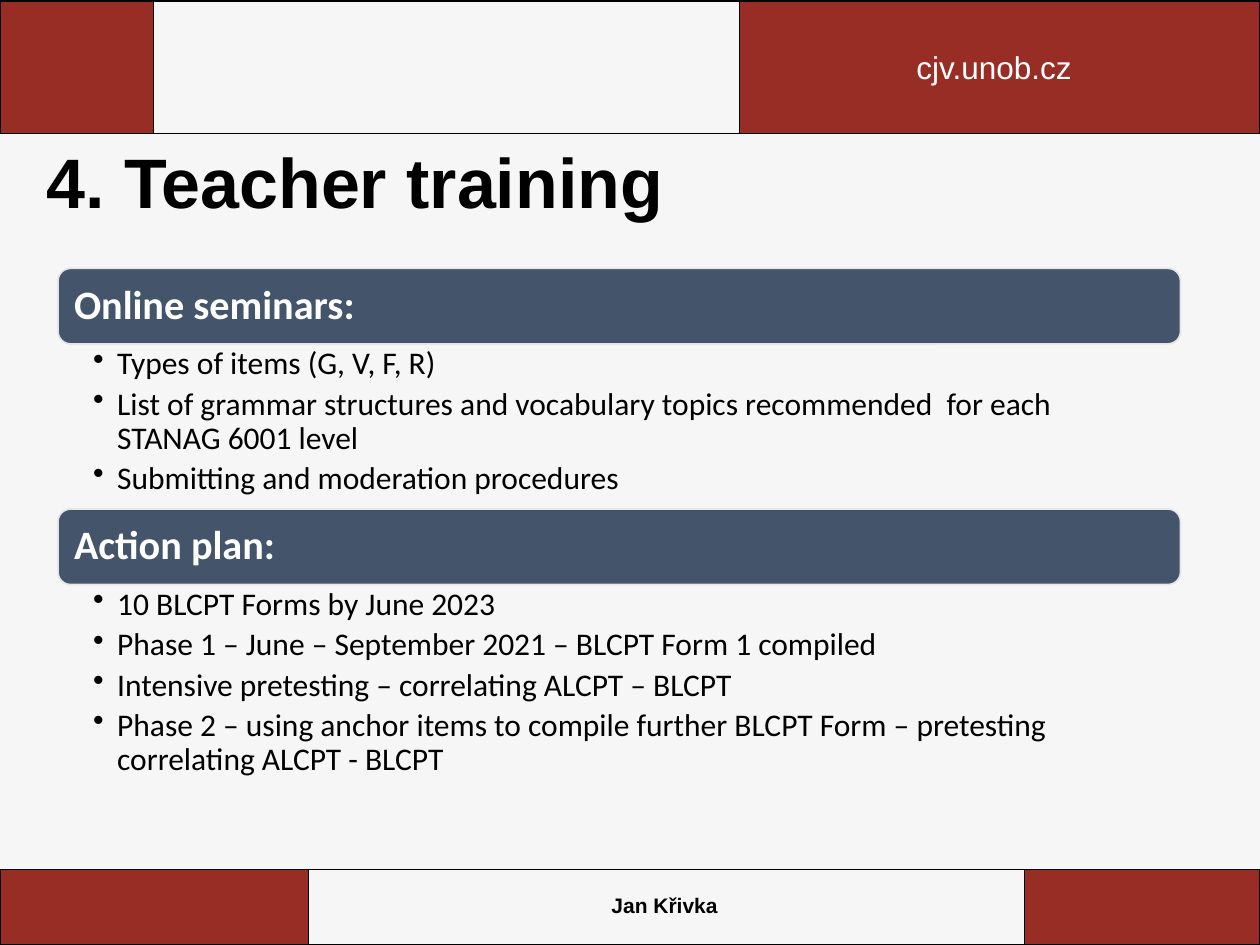
"""Build the teacher training slide."""
from dataclasses import dataclass

from lxml import etree
from pptx import Presentation
from pptx.dml.color import RGBColor
from pptx.enum.shapes import MSO_SHAPE
from pptx.enum.text import MSO_ANCHOR, PP_ALIGN
from pptx.oxml.ns import qn
from pptx.util import Inches, Pt

ROUND = MSO_SHAPE.ROUNDED_RECTANGLE
TOP, MIDDLE = MSO_ANCHOR.TOP, MSO_ANCHOR.MIDDLE
LEFT, CENTER = PP_ALIGN.LEFT, PP_ALIGN.CENTER

WIDE, HIGH = Inches(10), Inches(7.5)
COLS, ROWS = 100, 75
RED, SLATE, PALE = "982D26", "44546A", "F6F6F6"
BLACK, WHITE, EDGE = "000000", "FFFFFF", "E7E6E6"
BAR_TALL = 6


@dataclass(frozen=True)
class Box:
    """Place on the grid, in columns and rows."""
    left: float
    top: float
    wide: float
    tall: float


@dataclass(frozen=True)
class Font:
    """Look of a run."""
    name: str
    size: float
    color: str
    bold: bool = False


@dataclass(frozen=True)
class Band:
    """Strip of three cells, red at both ends."""
    box: Box
    widths: tuple[float, ...]


@dataclass(frozen=True)
class Label:
    """Single line of text in a box."""
    box: Box
    text: str
    font: Font
    align: PP_ALIGN = LEFT
    anchor: MSO_ANCHOR = TOP
    lines: float = 0.9


@dataclass(frozen=True)
class Topic:
    """Headed list that starts at a given row."""
    top: float
    head: str
    items: tuple[str, ...]
    tall: float


HEAD = Font("Calibri", 23, WHITE, True)
ITEM = Font("Calibri", 18, BLACK)

BANDS = (
    Band(Box(0, 0.1, 100, 10.5), (12.2, 46.5, 41.3)),
    Band(Box(0, 69, 100, 6), (24.5, 56.8, 18.7)),
)
LABELS = (
    Label(Box(68.1, 3.3, 21.6, 4), "cjv.unob.cz",
          Font("Arial", 18, WHITE), CENTER, lines=1.0),
    Label(Box(25.1, 69.9, 55.3, 4.1), "Jan Křivka",
          Font("Arial", 12, BLACK, True), CENTER, MIDDLE),
    Label(Box(2.7, 11.3, 95, 10), "4. Teacher training",
          Font("Arial", 40, BLACK, True)),
)
TOPICS = (
    Topic(21.3, "Online seminars:", (
        "Types of items (G, V, F, R)",
        "List of grammar structures and vocabulary topics recommended  for each STANAG 6001 level",
        "Submitting and moderation procedures",
    ), 13),
    Topic(40.4, "Action plan:", (
        "10 BLCPT Forms by June 2023",
        "Phase 1 – June – September 2021 – BLCPT Form 1 compiled",
        "Intensive pretesting – correlating ALCPT – BLCPT",
        "Phase 2 – using anchor items to compile further BLCPT Form – pretesting correlating ALCPT - BLCPT",
    ), 16.4),
)


def rgb(color: str) -> RGBColor:
    """Turn a hex string into a colour."""
    return RGBColor.from_string(color)


def col(count: float) -> int:
    """Width of a number of columns."""
    return round(WIDE * count / COLS)


def row(count: float) -> int:
    """Height of a number of rows."""
    return round(HIGH * count / ROWS)


def place(box: Box) -> tuple[int, int, int, int]:
    """Place of a box on the slide."""
    return col(box.left), row(box.top), col(box.wide), row(box.tall)


def write(para, text: str, font: Font) -> None:
    """Add one run to a paragraph."""
    run = para.add_run()
    run.text = text
    run.font.name = font.name
    run.font.size = Pt(font.size)
    run.font.bold = font.bold
    run.font.color.rgb = rgb(font.color)


def inset(frame, left: float, top: float, right: float) -> None:
    """Wrap a frame and set its margins."""
    frame.word_wrap = True
    frame.margin_left, frame.margin_right = col(left), col(right)
    frame.margin_top = frame.margin_bottom = row(top)


def border(cell) -> None:
    """Draw a thin black line on each side of a cell."""
    props = cell._tc.get_or_add_tcPr()
    for spot, side in enumerate(("lnL", "lnR", "lnT", "lnB")):
        line = etree.Element(qn(f"a:{side}"), w=str(Pt(1)))
        fill = etree.SubElement(line, qn("a:solidFill"))
        etree.SubElement(fill, qn("a:srgbClr"), val=BLACK)
        props.insert(spot, line)


def draw_band(slide, band: Band) -> None:
    """Draw a strip as a table of one row."""
    table = slide.shapes.add_table(1, len(band.widths), *place(band.box)).table
    table.first_row = table.horz_banding = False
    for spot, width in enumerate(band.widths):
        table.columns[spot].width = col(width)
        cell = table.cell(0, spot)
        if spot == 1:
            cell.fill.background()
        else:
            cell.fill.solid()
            cell.fill.fore_color.rgb = rgb(RED)
        border(cell)


def draw_label(slide, label: Label) -> None:
    """Draw a line of text."""
    frame = slide.shapes.add_textbox(*place(label.box)).text_frame
    inset(frame, 1, 0.5, 1)
    frame.vertical_anchor = label.anchor
    para = frame.paragraphs[0]
    para.alignment = label.align
    para.line_spacing = label.lines
    write(para, label.text, label.font)


def draw_topic(slide, topic: Topic) -> None:
    """Draw a heading bar and the list below it."""
    bar = slide.shapes.add_shape(ROUND, *place(Box(4.6, topic.top, 89.1, BAR_TALL)))
    bar.shadow.inherit = False
    bar.fill.solid()
    bar.fill.fore_color.rgb = rgb(SLATE)
    bar.line.color.rgb = rgb(EDGE)
    bar.line.width = Pt(1)
    inset(bar.text_frame, 1, 1, 1)
    bar.text_frame.vertical_anchor = MIDDLE
    para = bar.text_frame.paragraphs[0]
    para.alignment = LEFT
    para.line_spacing = 0.9
    write(para, topic.head, HEAD)

    box = Box(4.6, topic.top + BAR_TALL, 89.1, topic.tall)
    frame = slide.shapes.add_textbox(*place(box)).text_frame
    inset(frame, 2.8, 0.3, 1.8)
    for spot, item in enumerate(topic.items):
        para = frame.add_paragraph() if spot else frame.paragraphs[0]
        para.level = 1
        para.line_spacing = 0.9
        para.space_after = Pt(3.6)
        props = para._p.get_or_add_pPr()
        props.set("marL", str(col(1.9)))
        props.set("indent", str(-col(1.9)))
        etree.SubElement(props, qn("a:buChar"), char="•")
        write(para, item, ITEM)


def main() -> None:
    """Build and save the slide."""
    deck = Presentation()
    deck.slide_width, deck.slide_height = WIDE, HIGH
    slide = deck.slides.add_slide(deck.slide_layouts[6])
    slide.background.fill.solid()
    slide.background.fill.fore_color.rgb = rgb(PALE)
    for draw, group in ((draw_band, BANDS), (draw_label, LABELS), (draw_topic, TOPICS)):
        for entry in group:
            draw(slide, entry)
    deck.save("out.pptx")


if __name__ == "__main__":
    main()
